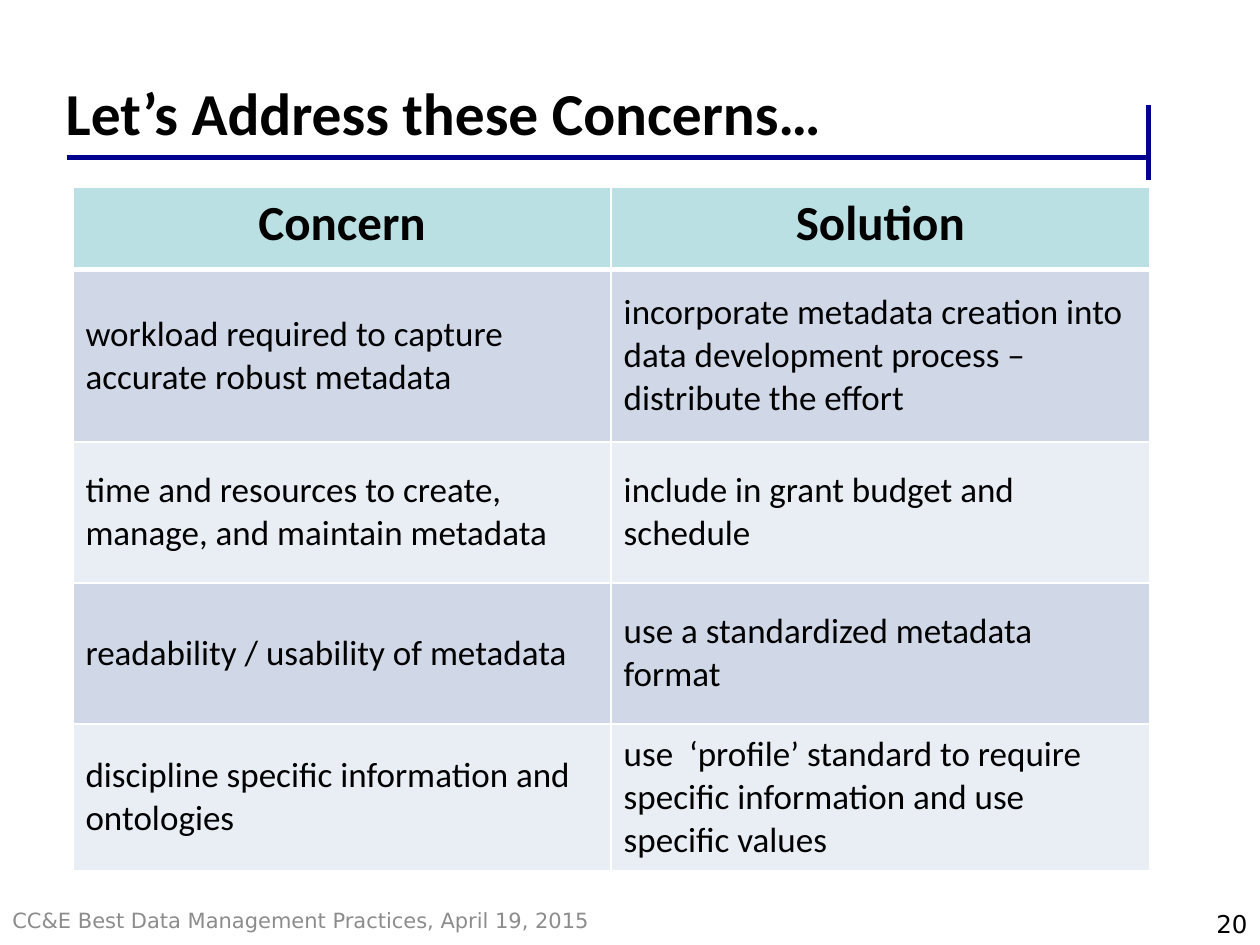
import pptx
import pptx.dml.color
import pptx.enum.shapes
import pptx.enum.text
import pptx.util
from pptx.oxml.ns import qn
import lxml.etree

Cm = pptx.util.Cm
Pt = pptx.util.Pt
RGBColor = pptx.dml.color.RGBColor
PP_ALIGN = pptx.enum.text.PP_ALIGN
MSO_ANCHOR = pptx.enum.text.MSO_ANCHOR

BLACK = RGBColor(0x00, 0x00, 0x00)
WHITE = RGBColor(0xFF, 0xFF, 0xFF)
NAVY = RGBColor(0x00, 0x00, 0x90)
GREY = RGBColor(0x8C, 0x8C, 0x8C)
HEADER = RGBColor(0xBB, 0xE0, 0xE3)
BANDS = (RGBColor(0xD0, 0xD8, 0xE8), RGBColor(0xE9, 0xED, 0xF4))

ROWS = [
    ("Concern", "Solution"),
    ("workload required to capture accurate robust metadata",
     "incorporate metadata creation into data development process – "
     "distribute the effort"),
    ("time and resources to create, manage, and maintain metadata",
     "include in grant budget and schedule"),
    ("readability / usability of metadata",
     "use a standardized metadata format"),
    ("discipline specific information and ontologies",
     "use  ‘profile’ standard to require specific information and use "
     "specific values"),
]
ROW_HEIGHTS = (1.65, 3.48, 2.84, 2.84, 2.97)
COLUMN_WIDTH = 10.85


class SlideBuilder:
    body_font = "Calibri"
    footer_font = "DejaVu Sans"

    def __init__(self, slide):
        self.slide = slide

    def set_text(self, tf, text, size, font, color=BLACK, bold=False,
                 align=PP_ALIGN.LEFT):
        tf.text = text
        p = tf.paragraphs[0]
        p.alignment = align
        r = p.runs[0]
        r.font.size = Pt(size)
        r.font.name = font
        r.font.bold = bold
        r.font.color.rgb = color

    def title(self, text, left, top, width, height):
        sp = self.slide.shapes.title
        sp.left, sp.top, sp.width, sp.height = map(Cm, (left, top, width, height))
        tf = sp.text_frame
        tf.auto_size = pptx.enum.text.MSO_AUTO_SIZE.NONE
        tf.vertical_anchor = MSO_ANCHOR.MIDDLE
        self.set_text(tf, text, 34, self.body_font, bold=True)

    def line(self, x1, y1, x2, y2):
        cxn = self.slide.shapes.add_connector(
            pptx.enum.shapes.MSO_CONNECTOR.STRAIGHT, *map(Cm, (x1, y1, x2, y2)))
        cxn.line.color.rgb = NAVY
        cxn.line.width = Pt(2.75)
        lxml.etree.SubElement(cxn._element.spPr, qn("a:effectLst"))

    def text(self, text, left, top, width, height, size, color=BLACK,
             align=PP_ALIGN.LEFT, anchor=MSO_ANCHOR.TOP):
        sp = self.slide.shapes.add_textbox(*map(Cm, (left, top, width, height)))
        tf = sp.text_frame
        tf.word_wrap = True
        tf.vertical_anchor = anchor
        self.set_text(tf, text, size, self.footer_font, color, align=align)

    def border(self, cell, side, width):
        ln = lxml.etree.SubElement(cell._tc.get_or_add_tcPr(), qn("a:ln" + side),
                                   w=str(Pt(width)))
        fill = lxml.etree.SubElement(ln, qn("a:solidFill"))
        lxml.etree.SubElement(fill, qn("a:srgbClr"), val=str(WHITE))

    def table(self, rows, left, top, column_width, row_heights):
        columns = len(rows[0])
        table = self.slide.shapes.add_table(
            len(rows), columns, Cm(left), Cm(top),
            Cm(column_width * columns), Cm(sum(row_heights))).table
        table.horz_banding = False
        for column in table.columns:
            column.width = Cm(column_width)
        for i, (texts, height) in enumerate(zip(rows, row_heights)):
            table.rows[i].height = Cm(height)
            for j, text in enumerate(texts):
                self.cell(table.cell(i, j), text, i)

    def cell(self, cell, text, row):
        is_header = row == 0
        # A thick rule parts the header from the body.
        widths = {"L": 1, "R": 1, "T": 3 if row == 1 else 1,
                  "B": 3 if is_header else 1}
        for side, width in widths.items():
            self.border(cell, side, width)
        cell.fill.solid()
        cell.fill.fore_color.rgb = HEADER if is_header else BANDS[(row - 1) % 2]
        cell.vertical_anchor = MSO_ANCHOR.TOP if is_header else MSO_ANCHOR.MIDDLE
        self.set_text(cell.text_frame, text, 28 if is_header else 20,
                      self.body_font, bold=is_header,
                      align=PP_ALIGN.CENTER if is_header else PP_ALIGN.LEFT)


def main():
    prs = pptx.Presentation()
    prs.slide_width, prs.slide_height = Cm(25.4), Cm(19.05)
    s = SlideBuilder(prs.slides.add_slide(prs.slide_layouts[5]))
    s.line(23.16, 2.11, 23.16, 3.63)
    s.line(1.35, 3.18, 23.14, 3.18)
    s.text("CC&E Best Data Management Practices, April 19, 2015",
           0, 18.03, 14.81, 1.02, 12, GREY, anchor=MSO_ANCHOR.MIDDLE)
    s.title("Let’s Address these Concerns…", 1.07, 1.27, 25.4, 1.96)
    s.table(ROWS, 1.47, 3.78, COLUMN_WIDTH, ROW_HEIGHTS)
    s.text("20", 19.48, 18.21, 5.92, 0.84, 14, align=PP_ALIGN.RIGHT)
    prs.save("out.pptx")


if __name__ == "__main__":
    main()
